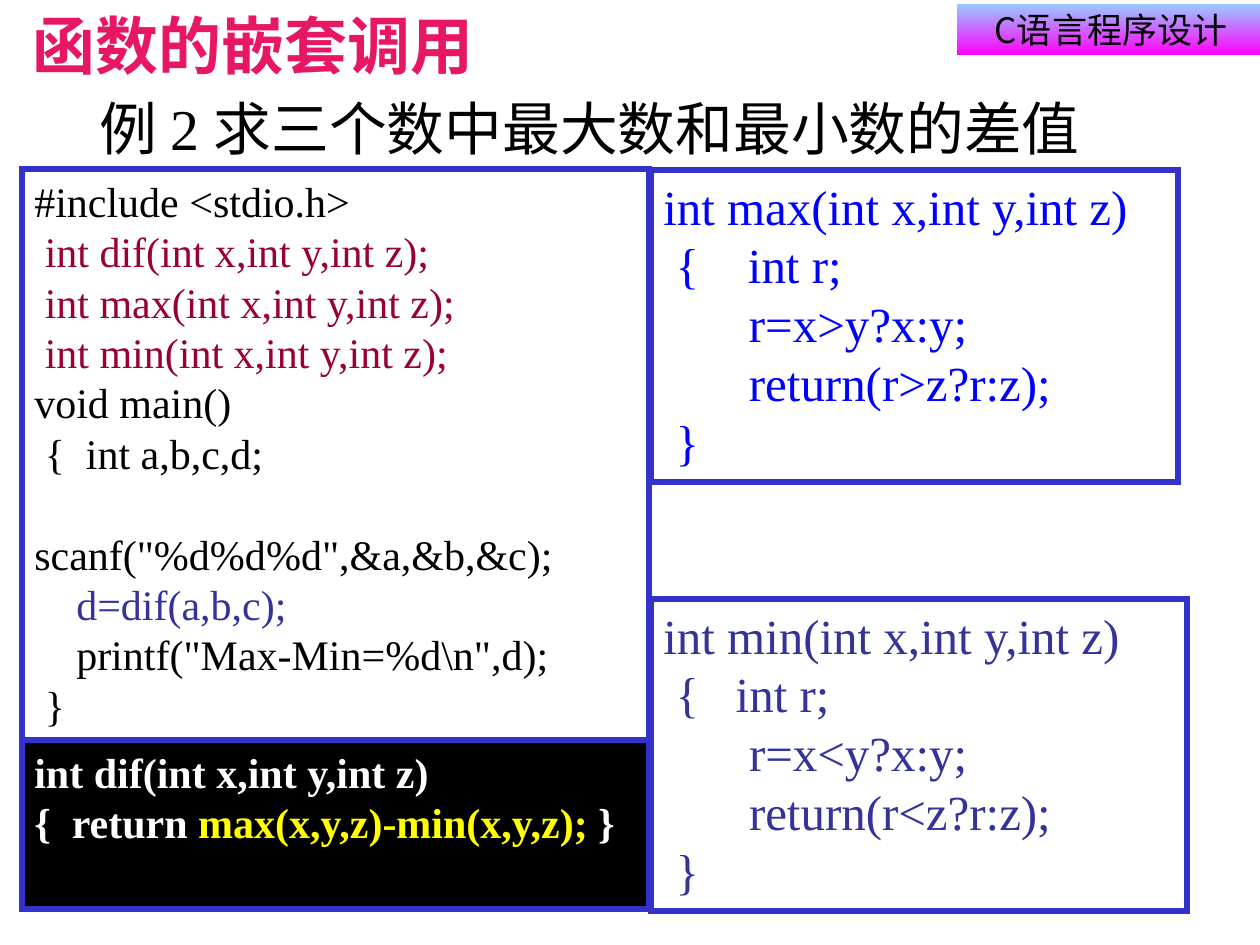
from lxml.etree import SubElement
from pptx import Presentation
from pptx.dml.color import RGBColor
from pptx.enum.shapes import MSO_SHAPE as Shape
from pptx.enum.text import MSO_ANCHOR as Anchor, MSO_AUTO_SIZE as AutoSize, PP_ALIGN as Align
from pptx.oxml.ns import qn
from pptx.util import Emu, Pt

EMU_PER_PX = 914400 / 126

BLACK = RGBColor(0x00, 0x00, 0x00)
WHITE = RGBColor(0xFF, 0xFF, 0xFF)
PINK = RGBColor(0xE8, 0x17, 0x66)
SKY = RGBColor(0x99, 0xCC, 0xFF)
MAGENTA = RGBColor(0xFF, 0x00, 0xFF)
BORDER = RGBColor(0x33, 0x33, 0xCC)
MAROON = RGBColor(0x99, 0x00, 0x33)
INDIGO = RGBColor(0x33, 0x33, 0x99)
BLUE = RGBColor(0x00, 0x00, 0xFF)
YELLOW = RGBColor(0xFF, 0xFF, 0x00)

SERIF = "Times New Roman"
SANS = "Noto Sans CJK SC"
HEADING_SANS = "Noto Sans CJK JP"


def px(value):
    return Emu(round(value * EMU_PER_PX))


class SlideBuilder:
    code_font = SERIF
    border_width = Pt(3)

    def __init__(self, slide):
        self.slide = slide

    def add_run(self, paragraph, text, size, color, latin, asian=SANS, bold=False):
        run = paragraph.add_run()
        run.text = text
        font = run.font
        font.name, font.size, font.bold = latin, Pt(size), bold
        font.color.rgb = color
        SubElement(run._r.get_or_add_rPr(), qn("a:ea")).set("typeface", asian)

    def title(self, box, text):
        shape = self.slide.shapes.title
        shape.left, shape.top, shape.width, shape.height = map(px, box)
        frame = shape.text_frame
        frame.auto_size = AutoSize.NONE
        frame.vertical_anchor = Anchor.MIDDLE
        paragraph = frame.paragraphs[0]
        paragraph.alignment = Align.LEFT
        self.add_run(paragraph, text, 33, BLACK, SERIF)

    def heading(self, box, text):
        frame = self.slide.shapes.add_textbox(*map(px, box)).text_frame
        frame.word_wrap = False
        paragraph = frame.paragraphs[0]
        paragraph.alignment = Align.CENTER
        self.add_run(paragraph, text, 36, PINK, HEADING_SANS, HEADING_SANS, True)

    def rectangle(self, box):
        shape = self.slide.shapes.add_shape(Shape.RECTANGLE, *map(px, box))
        shape.shadow.inherit = False
        shape.text_frame.word_wrap = True
        return shape

    def badge(self, box, text):
        shape = self.rectangle(box)
        shape.line.fill.background()
        shape.fill.gradient()
        shape.fill.gradient_angle = 270
        for stop, color in zip(shape.fill.gradient_stops, (SKY, MAGENTA)):
            stop.color.rgb = color
        frame = shape.text_frame
        frame.vertical_anchor = Anchor.MIDDLE
        paragraph = frame.paragraphs[0]
        paragraph.alignment = Align.CENTER
        self.add_run(paragraph, text, 20, BLACK, SANS)

    def code(self, box, lines, size, fill=WHITE, bold=False):
        """Each line is a list of (text, color) pairs."""
        shape = self.rectangle(box)
        shape.fill.solid()
        shape.fill.fore_color.rgb = fill
        shape.line.color.rgb = BORDER
        shape.line.width = self.border_width
        # Square corners on the border
        outline = shape.element.spPr.find(qn("a:ln"))
        SubElement(outline, qn("a:miter")).set("lim", "800000")
        frame = shape.text_frame
        frame.vertical_anchor = Anchor.TOP
        for index, line in enumerate(lines):
            paragraph = frame.add_paragraph() if index else frame.paragraphs[0]
            paragraph.alignment = Align.LEFT
            for text, color in line:
                self.add_run(paragraph, text, size, color, self.code_font, bold=bold)


def extreme_function(name, operator, brace_line, color):
    texts = [
        f"int {name}(int x,int y,int z)",
        brace_line,
        f"       r=x{operator}y?x:y;",
        f"       return(r{operator}z?r:z);",
        " }",
    ]
    return [[(text, color)] for text in texts]


def main():
    presentation = Presentation()
    presentation.slide_width, presentation.slide_height = px(1260), px(945)
    builder = SlideBuilder(presentation.slides.add_slide(presentation.slide_layouts[5]))

    # Header
    builder.badge((957, 4, 308, 51), "C语言程序设计")
    builder.heading((3, 0, 501, 52), "函数的嵌套调用")
    builder.title((87, 36, 1086, 183), "例 2 求三个数中最大数和最小数的差值")

    # Main program
    prototypes = [[(f" int {name}(int x,int y,int z);", MAROON)]
                  for name in ("dif", "max", "min")]
    builder.code((22, 169, 627, 571), [
        [("#include <stdio.h>", BLACK)],
        *prototypes,
        [("void main()", BLACK)],
        [(" {  int a,b,c,d;", BLACK)],
        [('         scanf("%d%d%d",&a,&b,&c);', BLACK)],
        [("    d=dif(a,b,c);", INDIGO)],
        [('    printf("Max-Min=%d\\n",d);', BLACK)],
        [(" }", BLACK)],
    ], 24)

    # Functions for the smallest and the largest number
    builder.code((651, 599, 536, 312),
                 extreme_function("min", "<", " {   int r;", INDIGO), 28)
    builder.code((651, 170, 527, 312),
                 extreme_function("max", ">", " {    int r;", BLUE), 28)

    # Difference function
    builder.code((22, 740, 627, 169), [
        [("int dif(int x,int y,int z)", WHITE)],
        [("{  return ", WHITE), ("max(x,y,z)-min(x,y,z);", YELLOW), (" }", WHITE)],
    ], 24, fill=BLACK, bold=True)

    presentation.save("out.pptx")


if __name__ == "__main__":
    main()
